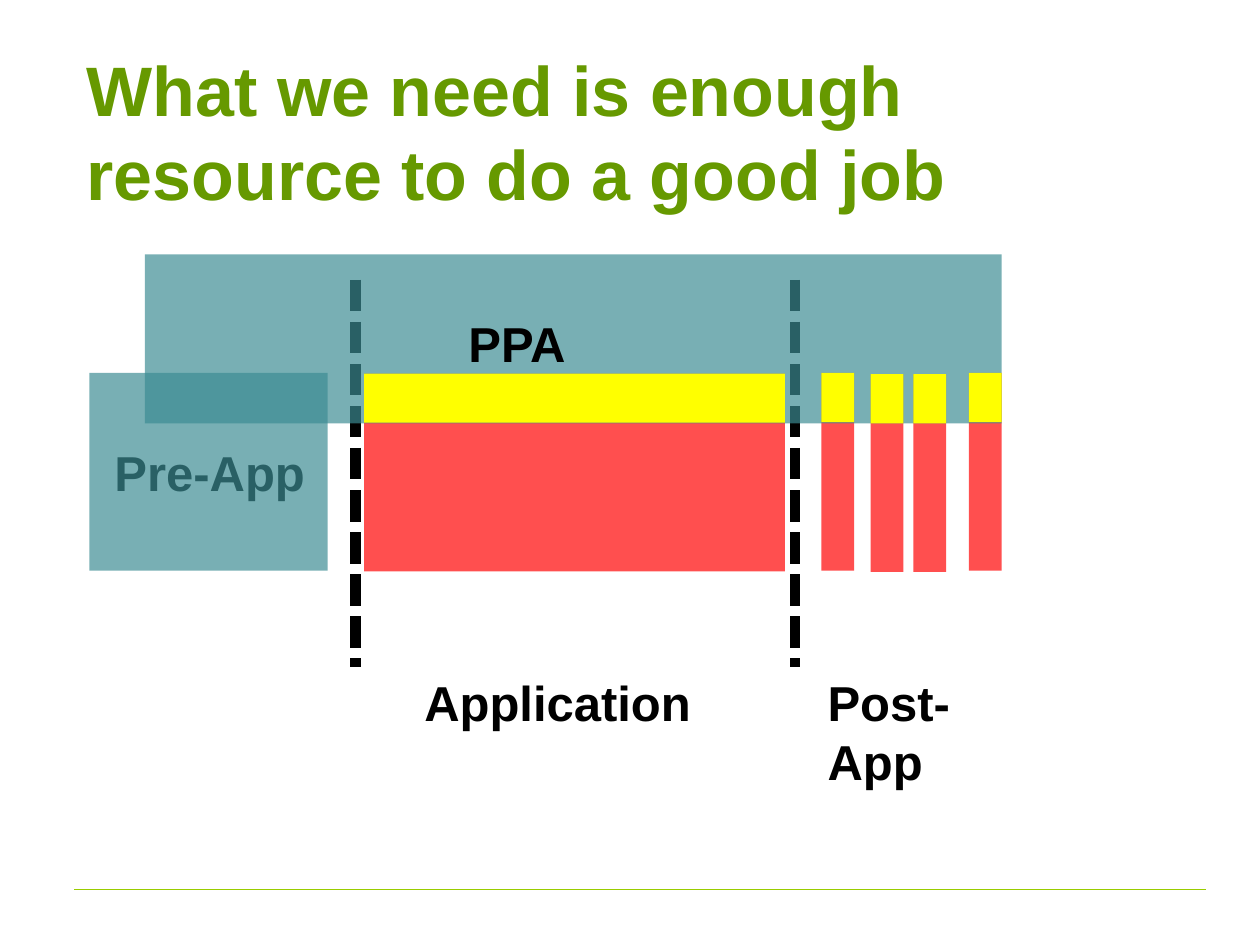
from lxml import etree
from pptx import Presentation
from pptx import util as u
from pptx.dml.color import RGBColor
from pptx.enum import dml, shapes, text
from pptx.oxml.ns import qn

# Grid cells of a tenth of an inch: 100 columns by 75 rows
CELL = 0.1
COLUMNS, ROWS = 100, 75
TEAL, RED, YELLOW, BLACK = "3C8C93", "FF0000", "FFFF00", "000000"
TITLE_GREEN, RULE_GREEN = "669900", "99CC00"
OPACITY = 69


def cells(count):
    return u.Inches(count * CELL)


def colour(code):
    return RGBColor.from_string(code)


def add_block(page, box, fill, opacity=100):
    """Borderless rectangle; box is left, top, width, height in cells."""
    block = page.shapes.add_shape(
        shapes.MSO_SHAPE.RECTANGLE, *[cells(part) for part in box])
    block.shadow.inherit = False
    block.line.fill.background()
    block.fill.solid()
    block.fill.fore_color.rgb = colour(fill)
    if opacity < 100:
        tint = block.fill._xPr.find(".//" + qn("a:srgbClr"))
        etree.SubElement(tint, qn("a:alpha"), val=str(opacity * 1000))


def add_rule(page, start, end, line_colour, width, dash=None):
    rule = page.shapes.add_connector(
        shapes.MSO_CONNECTOR.STRAIGHT, *[cells(part) for part in start + end])
    rule.line.color.rgb = colour(line_colour)
    rule.line.width = u.Pt(width)
    if dash:
        rule.line.dash_style = dash
    etree.SubElement(rule._element.spPr, qn("a:effectLst"))


def add_label(page, box, words, size=28, font_colour=BLACK,
              anchor=text.MSO_ANCHOR.TOP):
    label = page.shapes.add_textbox(*[cells(part) for part in box])
    frame = label.text_frame
    frame.word_wrap = True
    frame.vertical_anchor = anchor
    frame.text = words
    font = frame.paragraphs[0].runs[0].font
    font.name, font.size, font.bold = "Arial", u.Pt(size), True
    font.color.rgb = colour(font_colour)


def add_title(page, box):
    add_label(page, box, "What we need is enough resource to do a good job",
              40, TITLE_GREEN, text.MSO_ANCHOR.MIDDLE)


def add_timeline(page, box):
    """Three stages side by side, with the PPA band across their upper part."""
    left, top, width, height = box
    bar_top, bar_height, cap_height = top + 9.4, 15.7, 3.9
    application = (left + 21.8, bar_top + 0.05, 33.4)
    # The middle two post-application bars sit slightly lower
    post_bars = [(left + offset, bar_top + drop, 2.6)
                 for offset, drop in ((58.1, 0), (62, 0.1), (65.4, 0.1), (69.8, 0))]
    stages = [application] + post_bars

    # Red work behind the stage boundaries
    for x, y, span in stages:
        add_block(page, (x, y, span, bar_height), RED, OPACITY)

    # Dashed stage boundaries
    for x in (left + 21.1, left + 56):
        add_rule(page, (x, top + 2), (x, top + 32.7), BLACK, 6,
                 dml.MSO_LINE.SQUARE_DOT)

    # Stage names
    label_top = top + 32.7
    add_label(page, (left + 1, bar_top + 5, 18.2, 5.7), "Pre-App")
    add_label(page, (left + 25.6, label_top, 23.7, 5.7), "Application")
    add_label(page, (left + 57.6, label_top, 18.2, 10.4), "Post-App")

    # Pre-application block and PPA band
    add_block(page, (left, bar_top, 18.9, bar_height), TEAL, OPACITY)
    add_block(page, (left + 4.4, top, width - 4.4, 13.4), TEAL, OPACITY)
    add_label(page, (left + 29.1, top + 4.2, 21.4, 5.7), "PPA")

    # Yellow share of each stage that the PPA covers
    for x, y, span in stages:
        add_block(page, (x, y, span, cap_height), YELLOW)


def main():
    deck = Presentation()
    deck.slide_width, deck.slide_height = cells(COLUMNS), cells(ROWS)
    page = deck.slides.add_slide(deck.slide_layouts[6])
    add_rule(page, (5.9, 70.6), (95.7, 70.6), RULE_GREEN, 0.75)
    add_timeline(page, (7.1, 20.2, 72.4, 43.1))
    add_title(page, (5.9, 5.2, 90, 10.3))
    deck.save("out.pptx")


if __name__ == "__main__":
    main()
